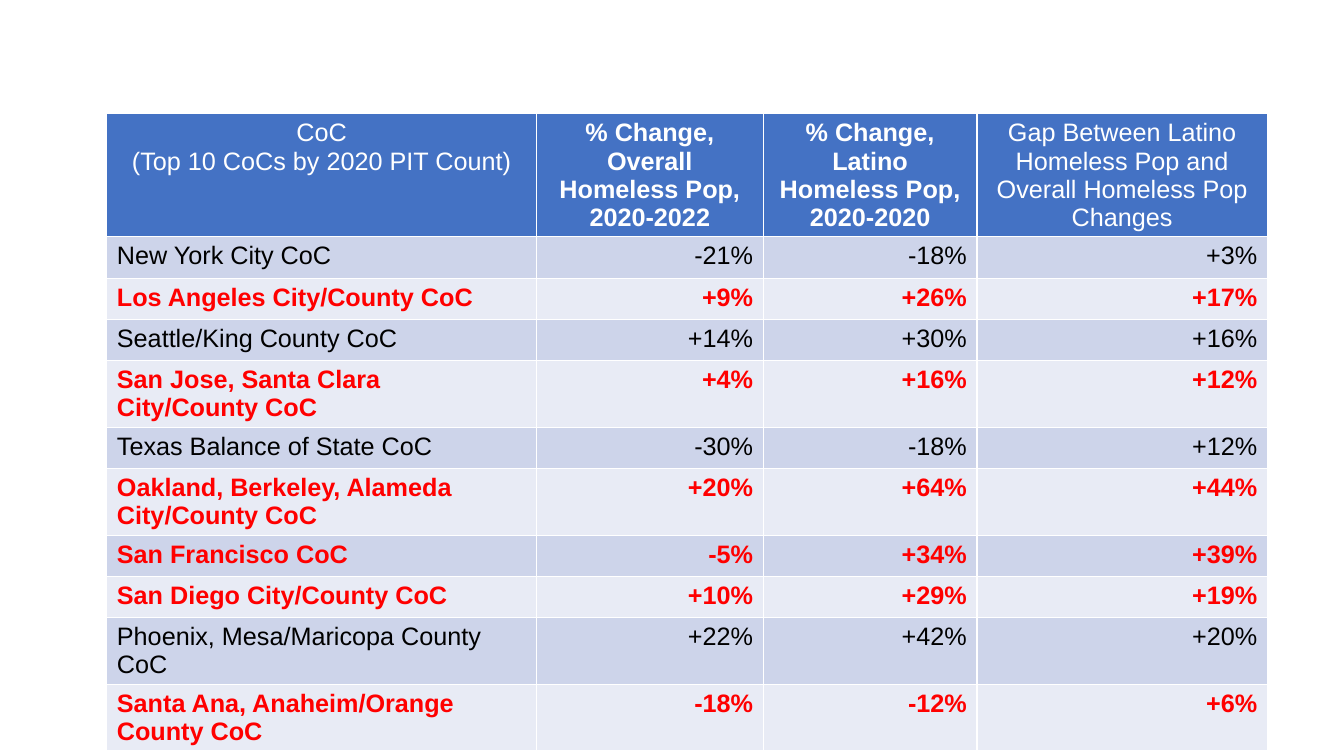
from pptx import Presentation
from pptx.dml.color import RGBColor
from pptx.enum import text
from pptx.util import Inches, Pt

HEADER_FILL, BAND_FILLS = "4472C4", ("CDD4EA", "E8EBF5")
WHITE, BLACK, RED = "FFFFFF", "000000", "FF0000"

# Heading, column width, bold
columns = [
    ("CoC\n(Top 10 CoCs by 2020 PIT Count)", 4.26, False),
    ("% Change, Overall Homeless Pop, 2020-2022", 2.25, True),
    ("% Change, Latino Homeless Pop, 2020-2020", 2.12, True),
    ("Gap Between Latino Homeless Pop and Overall Homeless Pop Changes", 2.88, False),
]
# CoC, overall change, Latino change, gap, highlighted
cocs = [
    ("New York City CoC", "-21%", "-18%", "+3%", False),
    ("Los Angeles City/County CoC", "+9%", "+26%", "+17%", True),
    ("Seattle/King County CoC", "+14%", "+30%", "+16%", False),
    ("San Jose, Santa Clara City/County CoC", "+4%", "+16%", "+12%", True),
    ("Texas Balance of State CoC", "-30%", "-18%", "+12%", False),
    ("Oakland, Berkeley, Alameda City/County CoC", "+20%", "+64%", "+44%", True),
    ("San Francisco CoC", "-5%", "+34%", "+39%", True),
    ("San Diego City/County CoC", "+10%", "+29%", "+19%", True),
    ("Phoenix, Mesa/Maricopa County CoC", "+22%", "+42%", "+20%", False),
    ("Santa Ana, Anaheim/Orange County CoC", "-18%", "-12%", "+6%", True),
]
ROW_HEIGHT = 0.41


def rgb(color):
    return RGBColor.from_string(color)


def fill_cell(cell, words, fill, color, bold, align):
    cell.fill.solid()
    cell.fill.fore_color.rgb = rgb(fill)
    paragraph = cell.text_frame.paragraphs[0]
    paragraph.alignment = align
    for number, line in enumerate(words.split("\n")):
        if number:
            paragraph.add_line_break()
        run = paragraph.add_run()
        run.text = line
        run.font.name = "Arial"
        run.font.size = Pt(18)
        run.font.bold = bold
        run.font.color.rgb = rgb(color)


prs = Presentation()
prs.slide_width, prs.slide_height = Inches(13.33), Inches(7.5)
slide = prs.slides.add_slide(prs.slide_layouts[6])

row_count = len(cocs) + 1
table_width = sum(width for _, width, _ in columns)
changes = slide.shapes.add_table(
    row_count, len(columns), Inches(1.06), Inches(1.13),
    Inches(table_width), Inches(row_count * ROW_HEIGHT)).table
for row in changes.rows:
    row.height = Inches(ROW_HEIGHT)

for col, (heading, width, bold) in enumerate(columns):
    changes.columns[col].width = Inches(width)
    fill_cell(changes.cell(0, col), heading, HEADER_FILL, WHITE, bold,
              text.PP_ALIGN.CENTER)

for row, (*entries, highlighted) in enumerate(cocs, start=1):
    for col, entry in enumerate(entries):
        fill_cell(changes.cell(row, col), entry, BAND_FILLS[(row - 1) % 2],
                  RED if highlighted else BLACK, highlighted,
                  text.PP_ALIGN.RIGHT if col else text.PP_ALIGN.LEFT)

prs.save("out.pptx")
